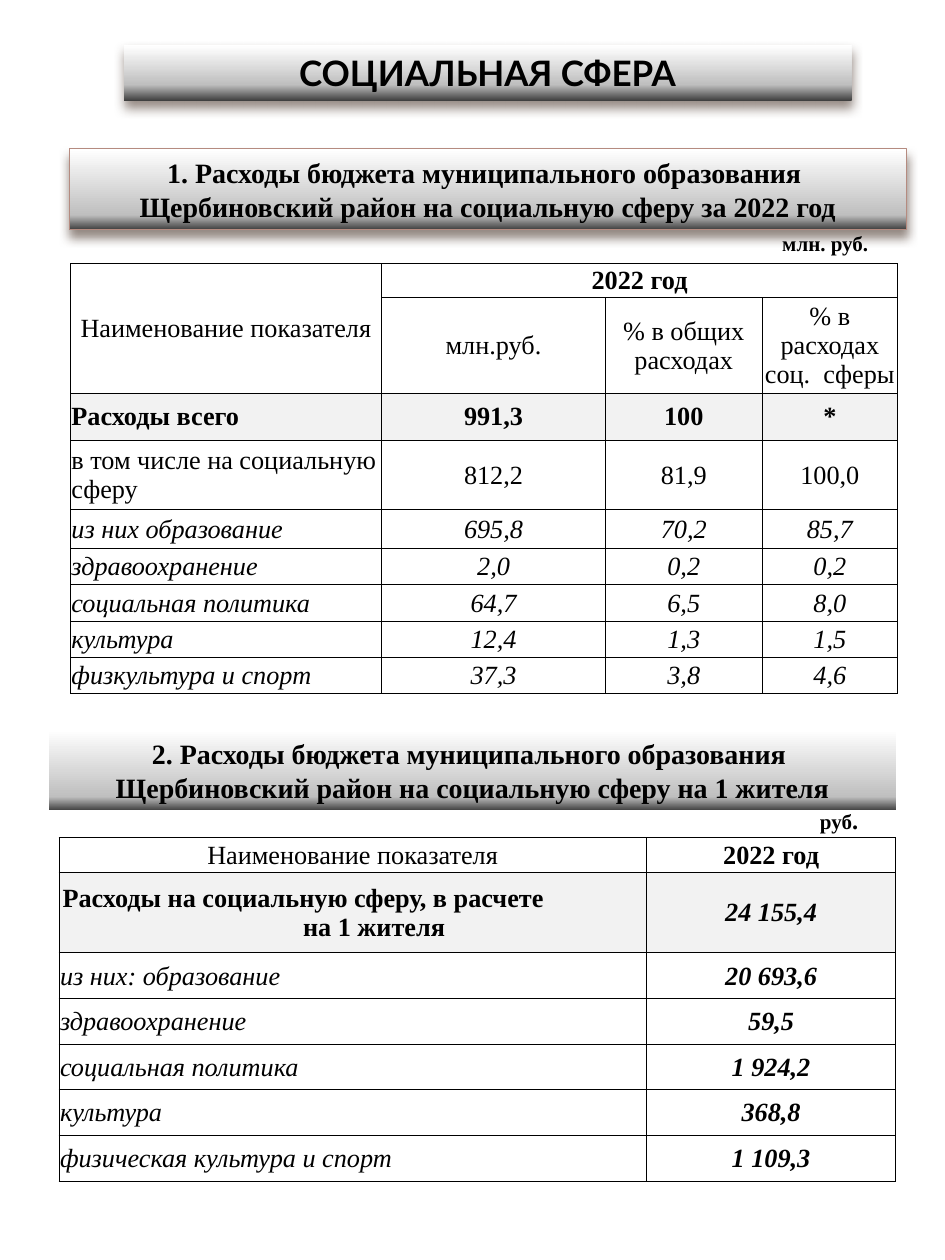
"""Builds the one-page summary of social spending with python-pptx."""
from copy import deepcopy

from lxml import etree
from pptx import Presentation
from pptx.dml.color import RGBColor
from pptx.enum.shapes import MSO_SHAPE
from pptx.enum.text import MSO_ANCHOR, MSO_AUTO_SIZE, PP_ALIGN
from pptx.oxml.ns import qn
from pptx.util import Cm, Pt

RECTANGLE = MSO_SHAPE.RECTANGLE
MIDDLE = MSO_ANCHOR.MIDDLE
NO_AUTOFIT = MSO_AUTO_SIZE.NONE
LEFT, CENTER = PP_ALIGN.LEFT, PP_ALIGN.CENTER

BLACK = RGBColor(0x00, 0x00, 0x00)
WHITE = RGBColor(0xFF, 0xFF, 0xFF)
DARK_GRAY = RGBColor(0x40, 0x40, 0x40)
SILVER = RGBColor(0xBF, 0xBF, 0xBF)
PALE_GRAY = RGBColor(0xF2, 0xF2, 0xF2)
ROSE_BROWN = RGBColor(0xB5, 0x8B, 0x80)
SHADOW_BROWN = RGBColor(0x4E, 0x3B, 0x30)

SPENDING_COLUMNS = (6.27, 4.52, 3.15, 2.74)
SPENDING_ROWS = (
    (0.69, "", "b", ("Наименование показателя", "2022 год", "", "")),
    (1.93, "", "", ("", "млн.руб.", "% в общих расходах", "% в расходах соц.  сферы")),
    (0.94, "b", "b", ("Расходы всего", "991,3", "100", "*")),
    (1.4, "", "", ("в том числе на социальную сферу", "812,2", "81,9", "100,0")),
    (0.79, "i", "i", ("из них образование", "695,8", "70,2", "85,7")),
    (0.73, "i", "i", ("здравоохранение", "2,0", "0,2", "0,2")),
    (0.73, "i", "i", ("социальная политика", "64,7", "6,5", "8,0")),
    (0.73, "i", "i", ("культура", "12,4", "1,3", "1,5")),
    (0.73, "i", "i", ("физкультура и спорт", "37,3", "3,8", "4,6")),
)
RESIDENT_COLUMNS = (11.84, 5.03)
RESIDENT_ROWS = (
    (0.69, "", "b", ("Наименование показателя", "2022 год")),
    (1.63, "b", "bi", ("Расходы на социальную сферу, в расчете\nна 1 жителя", "24 155,4")),
    (0.92, "i", "bi", ("из них: образование", "20 693,6")),
    (0.92, "i", "bi", ("здравоохранение", "59,5")),
    (0.92, "i", "bi", ("социальная политика", "1 924,2")),
    (0.92, "i", "bi", ("культура", "368,8")),
    (0.92, "i", "bi", ("физическая культура и спорт", "1 109,3")),
)


class Page:
    """Holds the text style and the slide being filled."""

    heading_font = "Lato"
    body_font = "Times New Roman"

    def __init__(self, deck):
        self.slide = deck.slides.add_slide(deck.slide_layouts[5])

    def add_text(self, para, text, size, style="", font=body_font):
        """Adds text to a paragraph, one run per line."""
        for number, line in enumerate(text.split("\n")):
            if number:
                para.add_line_break()
            run = para.add_run()
            run.text = line
            run.font.name = font
            run.font.size = Pt(size)
            run.font.bold = "b" in style
            run.font.italic = "i" in style
            run.font.color.rgb = BLACK

    def add_shadow(self, shape):
        """Puts a soft shadow below a shape."""
        effects = shape._element.spPr.find(qn("a:effectLst"))
        shadow = etree.SubElement(
            effects, qn("a:outerShdw"), blurRad=str(Pt(6)), dist=str(Pt(4)),
            dir="5400000", rotWithShape="0")
        color = etree.SubElement(shadow, qn("a:srgbClr"), val=str(SHADOW_BROWN))
        etree.SubElement(color, qn("a:alpha"), val="60000")

    def format_banner(self, shape, text, size, middle_stop, font=body_font,
                      line=None, shadow=False):
        """Gives a shape the metallic gradient and a centred caption."""
        shape.fill.gradient()
        shape.fill.gradient_angle = 90
        stops = shape._element.spPr.find(".//" + qn("a:gsLst"))
        stops.insert(1, deepcopy(stops[0]))
        colors = ((0, DARK_GRAY), (middle_stop, SILVER), (1, WHITE))
        for stop, (position, color) in zip(shape.fill.gradient_stops, colors):
            stop.position = position
            stop.color.rgb = color
        if line is None:
            shape.line.fill.background()
        else:
            shape.line.color.rgb = line
            shape.line.width = Pt(0.79)
        shape.shadow.inherit = False
        if shadow:
            self.add_shadow(shape)
        frame = shape.text_frame
        frame.word_wrap = True
        frame.auto_size = NO_AUTOFIT
        frame.vertical_anchor = MIDDLE
        para = frame.paragraphs[0]
        para.alignment = CENTER
        self.add_text(para, text, size, "b", font)

    def add_title(self, text, left, top, width, height):
        """Moves and formats the title placeholder."""
        title = self.slide.shapes.title
        title.left, title.top = Cm(left), Cm(top)
        title.width, title.height = Cm(width), Cm(height)
        self.format_banner(title, text, 20, 0.29, self.heading_font, shadow=True)

    def add_banner(self, text, left, top, width, height, middle_stop, **look):
        """Adds a section heading."""
        shape = self.slide.shapes.add_shape(
            RECTANGLE, Cm(left), Cm(top), Cm(width), Cm(height))
        self.format_banner(shape, text, 16, middle_stop, **look)

    def add_unit(self, runs, left, top, width, height):
        """Adds a unit label above a table."""
        box = self.slide.shapes.add_textbox(Cm(left), Cm(top), Cm(width), Cm(height))
        box.text_frame.word_wrap = True
        for text, size in runs:
            self.add_text(box.text_frame.paragraphs[0], text, size, "b")

    def format_cell(self, cell, shaded):
        """Sets the margins, borders and fill of a cell."""
        cell.vertical_anchor = MIDDLE
        cell.margin_left = cell.margin_right = cell.margin_top = Cm(0.02)
        cell.margin_bottom = 0
        properties = cell._tc.get_or_add_tcPr()
        for side in ("L", "R", "T", "B"):
            border = etree.SubElement(properties, qn("a:ln" + side), w=str(Pt(0.5)))
            solid = etree.SubElement(border, qn("a:solidFill"))
            etree.SubElement(solid, qn("a:srgbClr"), val=str(BLACK))
        if shaded:
            cell.fill.solid()
            cell.fill.fore_color.rgb = PALE_GRAY
        else:
            cell.fill.background()

    def add_table(self, columns, rows, header_rows, left, top):
        """Adds a bordered table whose first row after the header is shaded."""
        height = sum(row[0] for row in rows)
        table = self.slide.shapes.add_table(
            len(rows), len(columns), Cm(left), Cm(top), Cm(sum(columns)), Cm(height)).table
        table.first_row = table.horz_banding = False
        for column, width in zip(table.columns, columns):
            column.width = Cm(width)
        for r, (height, label_style, value_style, texts) in enumerate(rows):
            table.rows[r].height = Cm(height)
            for c, text in enumerate(texts):
                cell = table.cell(r, c)
                self.format_cell(cell, r == header_rows)
                para = cell.text_frame.paragraphs[0]
                para.alignment = LEFT if c == 0 and r >= header_rows else CENTER
                if text:
                    self.add_text(para, text, 15, value_style if c else label_style)
        return table


def main():
    """Builds and saves the deck."""
    deck = Presentation()
    deck.slide_width, deck.slide_height = Cm(19.05), Cm(25.4)
    page = Page(deck)
    page.add_title("СОЦИАЛЬНАЯ СФЕРА", 2.49, 0.91, 14.68, 1.12)

    page.add_banner(
        "1. Расходы бюджета муниципального образования \n"
        "Щербиновский район на социальную сферу за 2022 год",
        1.4, 3, 16.87, 1.63, 0.18, line=ROSE_BROWN, shadow=True)
    spending = page.add_table(SPENDING_COLUMNS, SPENDING_ROWS, 2, 1.42, 5.31)
    spending.cell(0, 0).merge(spending.cell(1, 0))
    spending.cell(0, 1).merge(spending.cell(0, 3))

    page.add_banner(
        "2. Расходы бюджета муниципального образования \n"
        "Щербиновский район на социальную сферу на 1 жителя",
        0.99, 14.71, 17.07, 1.63, 0.17)
    page.add_unit((("млн. руб.", 12),), 15.52, 4.52, 2.59, 0.76)
    resident = page.add_table(RESIDENT_COLUMNS, RESIDENT_ROWS, 1, 1.19, 16.89)
    total = resident.cell(1, 0).text_frame.paragraphs[0]._p.get_or_add_pPr()
    total.set("marL", str(Cm(4.9)))
    total.set("indent", str(Cm(-4.85)))
    page.add_unit((("руб", 12), (".", 14)), 16.28, 16.1, 1.78, 0.86)

    deck.save("out.pptx")


if __name__ == "__main__":
    main()
